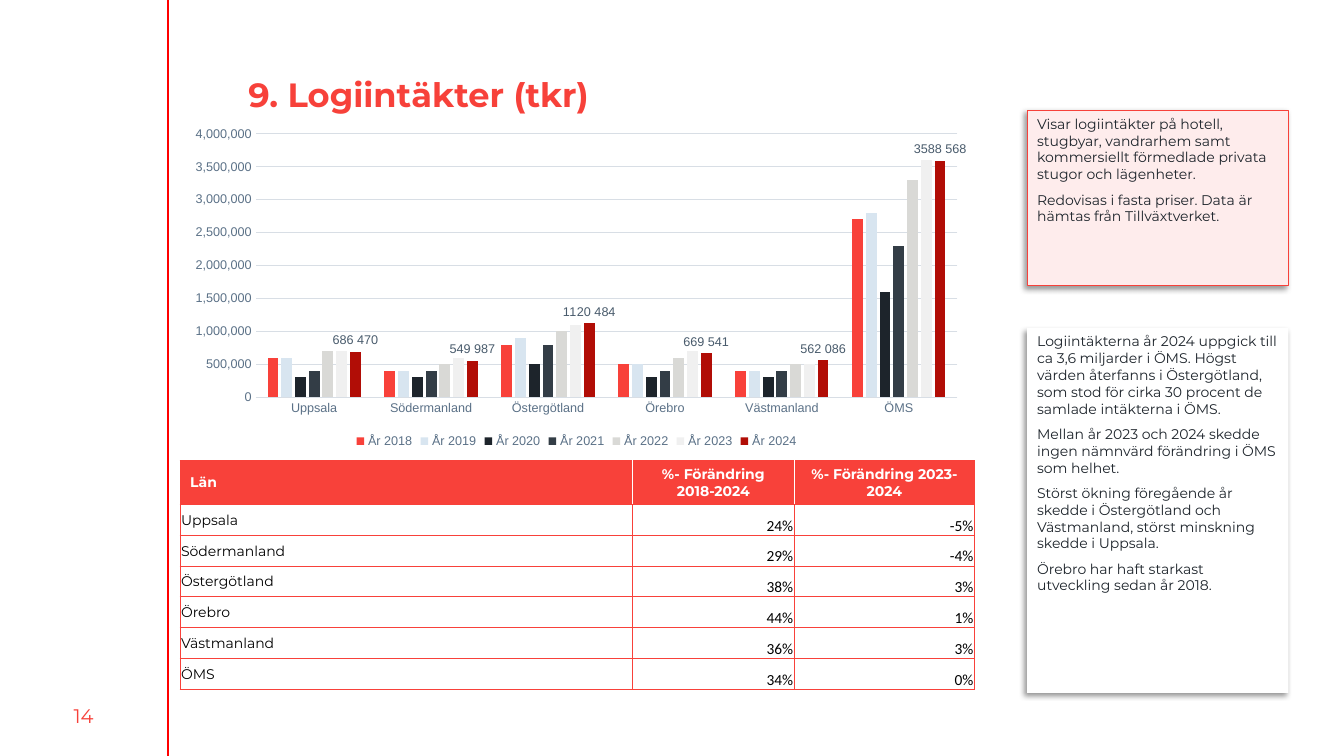
from dataclasses import dataclass

import pptx
import pptx.chart.data
import pptx.dml.color
import pptx.enum.chart
import pptx.enum.shapes
import pptx.enum.text
import pptx.oxml
import pptx.oxml.ns
import pptx.util

WIDTH, HEIGHT = pptx.util.Inches(13.33), pptx.util.Inches(7.5)
RED, TABLE_RED, INK, AXIS, GRID = "F7413A", "F8413A", "1D242B", "5B7187", "D8DEE5"
HEAD_FONT, CHART_FONT = "Montserrat", "Arial"
ALIGN, ANCHOR = pptx.enum.text.PP_ALIGN, pptx.enum.text.MSO_ANCHOR
NAMESPACE = pptx.oxml.ns.nsdecls("a")


@dataclass
class Area:
    """A rectangle in percent of the slide's width and height."""
    left: float
    top: float
    width: float
    height: float

    def emu(self) -> tuple[int, int, int, int]:
        return across(self.left), down(self.top), across(self.width), down(self.height)


@dataclass
class Panel:
    area: Area
    fill: str
    border: str | None
    paragraphs: list[str]


@dataclass
class Year:
    name: str
    color: str
    values: list[int]


PANELS = [
    Panel(Area(76.43, 14.6, 19.43, 23.2), "FEECEC", RED, [
        "Visar logiintäkter på hotell, stugbyar, vandrarhem samt kommersiellt "
        "förmedlade privata stugor och lägenheter.",
        "Redovisas i fasta priser. Data är hämtas från Tillväxtverket."]),
    Panel(Area(76.43, 43.38, 19.43, 48.27), "FFFFFF", None, [
        "Logiintäkterna år 2024 uppgick till ca 3,6 miljarder i ÖMS. Högst värden "
        "återfanns i Östergötland, som stod för cirka 30 procent de samlade "
        "intäkterna i ÖMS.",
        "Mellan år 2023 och 2024 skedde ingen nämnvärd förändring i ÖMS som helhet.",
        "Störst ökning föregående år skedde i Östergötland och Västmanland, "
        "störst minskning skedde i Uppsala.",
        "Örebro har haft starkast utveckling sedan år 2018."]),
]
COUNTIES = ["Uppsala", "Södermanland", "Östergötland", "Örebro", "Västmanland", "ÖMS"]
YEARS = [
    Year("År 2018", "F8413A", [600000, 400000, 800000, 500000, 400000, 2700000]),
    Year("År 2019", "D8E5F0", [600000, 400000, 900000, 500000, 400000, 2800000]),
    Year("År 2020", "1D242B", [300000, 300000, 500000, 300000, 300000, 1600000]),
    Year("År 2021", "333D46", [400000, 400000, 800000, 400000, 400000, 2300000]),
    Year("År 2022", "D9D9D6", [700000, 500000, 1000000, 600000, 500000, 3300000]),
    Year("År 2023", "F0F0F0", [700000, 600000, 1100000, 700000, 500000, 3600000]),
    Year("År 2024", "B10D06", [686470, 549987, 1120484, 669541, 562086, 3588568]),
]
HEADINGS = ["Län", "%- Förändring 2018-2024", "%- Förändring 2023-2024"]
CHANGES = [("24%", "-5%"), ("29%", "-4%"), ("38%", "3%"),
           ("44%", "1%"), ("36%", "3%"), ("34%", "0%")]
COLUMN_WIDTHS = [33.65, 12.05, 13.4]
HEADER_HEIGHT, ROW_HEIGHT = 5.47, 4.08


def across(percent: float) -> int:
    return round(WIDTH * percent / 100)


def down(percent: float) -> int:
    return round(HEIGHT * percent / 100)


def rgb(value: str) -> pptx.dml.color.RGBColor:
    return pptx.dml.color.RGBColor.from_string(value)


def style_font(font, size: float, color: str, name: str, bold: bool = False) -> None:
    font.size, font.name, font.bold = pptx.util.Pt(size), name, bold
    font.color.rgb = rgb(color)


def style_line(line, color: str, width: float = 0.75) -> None:
    line.color.rgb = rgb(color)
    line.width = pptx.util.Pt(width)


def write(frame, *texts: str, size: float = 10, color: str = INK, name: str = HEAD_FONT,
          bold: bool = False, align=ALIGN.LEFT, gap: float = 0) -> None:
    """Fill a text frame, one paragraph per text, with gap points on either side."""
    for index, text in enumerate(texts):
        para = frame.add_paragraph() if index else frame.paragraphs[0]
        para.alignment = align
        para.space_before = pptx.util.Pt(gap if index else 0)
        para.space_after = pptx.util.Pt(gap)
        span = para.add_run()
        span.text = text
        style_font(span.font, size, color, name, bold)


def add_label(page, area: Area, text: str, inset: float, anchor, **text_format) -> None:
    frame = page.shapes.add_textbox(*area.emu()).text_frame
    frame.word_wrap, frame.vertical_anchor = True, anchor
    frame.margin_left = frame.margin_right = pptx.util.Inches(inset)
    frame.margin_top = frame.margin_bottom = pptx.util.Inches(0.05)
    write(frame, text, **text_format)


def add_rule(page, left: float) -> None:
    rule = page.shapes.add_connector(pptx.enum.shapes.MSO_CONNECTOR.STRAIGHT,
                                     across(left), 0, across(left), HEIGHT)
    style_line(rule.line, "FF0000")
    rule._element.spPr.append(pptx.oxml.parse_xml(f"<a:effectLst {NAMESPACE}/>"))


def add_panel(page, panel: Panel) -> None:
    box = page.shapes.add_shape(pptx.enum.shapes.MSO_SHAPE.RECTANGLE, *panel.area.emu())
    box.fill.solid()
    box.fill.fore_color.rgb = rgb(panel.fill)
    if panel.border:
        style_line(box.line, panel.border, 1)
    else:
        box.line.fill.background()
    box._element.spPr.append(pptx.oxml.parse_xml(
        f'<a:effectLst {NAMESPACE}><a:outerShdw blurRad="50800" dist="38100" dir="8100000" '
        'algn="tr" rotWithShape="0"><a:srgbClr val="000000"><a:alpha val="40000"/>'
        '</a:srgbClr></a:outerShdw></a:effectLst>'))
    box.text_frame.word_wrap, box.text_frame.vertical_anchor = True, ANCHOR.TOP
    write(box.text_frame, *panel.paragraphs, gap=3)


def border_cell(cell, left: str = TABLE_RED, right: str = TABLE_RED) -> None:
    colors = {"lnL": left, "lnR": right, "lnT": TABLE_RED, "lnB": TABLE_RED}
    for index, (side, color) in enumerate(colors.items()):
        cell._tc.get_or_add_tcPr().insert(index, pptx.oxml.parse_xml(
            f'<a:{side} {NAMESPACE} w="9525"><a:solidFill><a:srgbClr val="{color}"/>'
            f'</a:solidFill></a:{side}>'))


def add_change_table(page, area: Area) -> None:
    rows = [HEADINGS, *([county, *change] for county, change in zip(COUNTIES, CHANGES))]
    table = page.shapes.add_table(len(rows), len(HEADINGS), *area.emu()).table
    table.first_row = table.horz_banding = False
    for column, width in zip(table.columns, COLUMN_WIDTHS):
        column.width = across(width)
    for row_index, texts in enumerate(rows):
        table.rows[row_index].height = down(ROW_HEIGHT if row_index else HEADER_HEIGHT)
        for column_index, text in enumerate(texts):
            cell = table.cell(row_index, column_index)
            cell.vertical_anchor = ANCHOR.MIDDLE
            if row_index == 0:
                cell.fill.solid()
                cell.fill.fore_color.rgb = rgb(TABLE_RED)
                write(cell.text_frame, text, color="FFFFFF", bold=True,
                      align=ALIGN.CENTER if column_index else ALIGN.LEFT)
                border_cell(cell, "FFFFFF" if column_index else TABLE_RED, "FFFFFF" if
                            column_index < len(HEADINGS) - 1 else TABLE_RED)
                continue
            cell.fill.background()
            cell.margin_left = cell.margin_right = cell.margin_top = pptx.util.Inches(0.01)
            cell.margin_bottom = 0
            if column_index:
                cell.vertical_anchor = ANCHOR.BOTTOM
                write(cell.text_frame, text, size=11, color="000000", name="Calibri",
                      align=ALIGN.RIGHT)
            else:
                write(cell.text_frame, text, color="000000")
            border_cell(cell)


def add_revenue_chart(page, area: Area) -> None:
    data = pptx.chart.data.CategoryChartData(number_format="#,##0")
    data.categories = COUNTIES
    for year in YEARS:
        data.add_series(year.name, year.values)
    chart = page.shapes.add_chart(pptx.enum.chart.XL_CHART_TYPE.COLUMN_CLUSTERED,
                                  *area.emu(), data).chart
    chart.has_title = False
    style_font(chart.font, 10, INK, CHART_FONT)
    chart.has_legend = True
    chart.legend.position = pptx.enum.chart.XL_LEGEND_POSITION.BOTTOM
    chart.legend.include_in_layout = False
    style_font(chart.legend.font, 9, AXIS, CHART_FONT)
    for axis in (chart.category_axis, chart.value_axis):
        axis.major_tick_mark = axis.minor_tick_mark = pptx.enum.chart.XL_TICK_MARK.NONE
        style_font(axis.tick_labels.font, 9, AXIS, CHART_FONT)
    style_line(chart.category_axis.format.line, GRID)
    amounts = chart.value_axis
    amounts.format.line.fill.background()
    amounts.minimum_scale, amounts.maximum_scale, amounts.major_unit = 0, 4000000, 500000
    style_line(amounts.major_gridlines.format.line, GRID)
    amounts.tick_labels.number_format = "#,##0"
    amounts.tick_labels.number_format_is_linked = False
    plot = chart.plots[0]
    plot.gap_width, plot.overlap, plot.vary_by_categories = 219, -27, False
    for series, year in zip(plot.series, YEARS):
        series.format.fill.solid()
        series.format.fill.fore_color.rgb = rgb(year.color)
    labels = plot.series[-1].data_labels
    labels.show_value = True
    labels.position = pptx.enum.chart.XL_LABEL_POSITION.OUTSIDE_END
    labels.number_format, labels.number_format_is_linked = r"#\ ###", False
    style_font(labels.font, 9, "495B6C", CHART_FONT)


def main() -> None:
    deck = pptx.Presentation()
    deck.slide_width, deck.slide_height = WIDTH, HEIGHT
    page = deck.slides.add_slide(deck.slide_layouts[6])
    add_label(page, Area(0, 92, 12.45, 5.33), "14", 0.1, ANCHOR.MIDDLE,
              size=14, color=RED, align=ALIGN.CENTER)
    add_rule(page, 12.5)
    add_label(page, Area(18.1, 9.07, 75.92, 11.87), "9. Logiintäkter (tkr)", 0.05,
              ANCHOR.TOP, size=24, color=RED, bold=True)
    add_change_table(page, Area(13.4, 60.93, 59.1, 30.27))
    for panel in PANELS:
        add_panel(page, panel)
    add_revenue_chart(page, Area(13.38, 15.87, 59.03, 44))
    deck.save("out.pptx")


if __name__ == "__main__":
    main()
